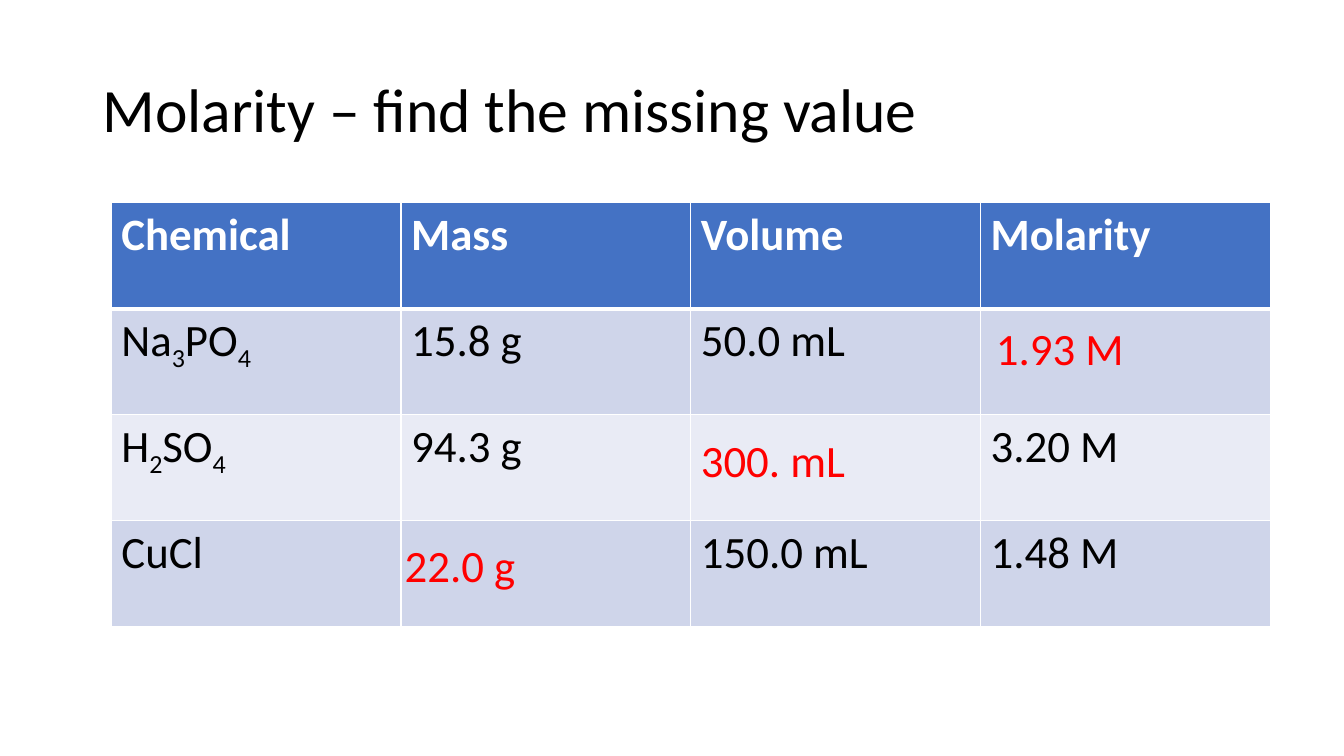
from itertools import groupby

from lxml.etree import SubElement
from pptx import Presentation
from pptx.dml.color import RGBColor
from pptx.enum.text import MSO_ANCHOR, PP_ALIGN
from pptx.oxml.ns import qn
from pptx.util import Pt

EMU_PER_PX = 9525
FONT = "Calibri"
COLORS = {
    "text": "000000",
    "white": "FFFFFF",
    "header": "4472C4",
    "odd_row": "CFD5EA",
    "even_row": "E9EBF5",
    "answer": "FF0000",
}
MOLARITY_ROWS = [
    ["Chemical", "Mass", "Volume", "Molarity"],
    ["Na3PO4", "15.8 g", "50.0 mL", ""],
    ["H2SO4", "94.3 g", "", "3.20 M"],
    ["CuCl", "", "150.0 mL", "1.48 M"],
]
ANSWERS = [
    ("1.93 M", 939, 301),
    ("300. mL", 658, 407),
    ("22.0 g", 376, 507),
]


def px(length):
    return length * EMU_PER_PX


def write(frame, text, size=32, color="text", bold=False, formula=False,
          spacing=None):
    """Fill the first paragraph; in a formula, digits become subscripts."""
    paragraph = frame.paragraphs[0]
    paragraph.alignment = PP_ALIGN.LEFT
    if spacing:
        paragraph.line_spacing = spacing
    if formula:
        parts = [(digit, "".join(chars)) for digit, chars in groupby(text, str.isdigit)]
    else:
        parts = [(False, text)]
    for subscript, part in parts:
        run = paragraph.add_run()
        run.text = part
        run.font.name = FONT
        run.font.size = Pt(size)
        run.font.bold = bold
        run.font.color.rgb = RGBColor.from_string(COLORS[color])
        if subscript:
            run.font._element.set("baseline", "-25000")


def set_borders(cell, **widths):
    """Draw white cell edges, given as L, R, T and B widths in points."""
    properties = cell._tc.get_or_add_tcPr()
    for position, (side, width) in enumerate(widths.items()):
        line = SubElement(properties, qn(f"a:ln{side}"), w=str(Pt(width)))
        fill = SubElement(line, qn("a:solidFill"))
        SubElement(fill, qn("a:srgbClr"), val=COLORS["white"])
        properties.insert(position, line)


def add_title(slide, text, left, top, width, height):
    title = slide.shapes.title
    title.left, title.top = px(left), px(top)
    title.width, title.height = px(width), px(height)
    title.text_frame.word_wrap = True
    title.text_frame.vertical_anchor = MSO_ANCHOR.MIDDLE
    write(title.text_frame, text, size=44, spacing=0.9)


def add_molarity_table(slide, rows, left, top, width, height):
    table = slide.shapes.add_table(len(rows), len(rows[0]), px(left), px(top),
                                   px(width), px(height)).table
    for r, values in enumerate(rows):
        header = r == 0
        row_color = "header" if header else "odd_row" if r % 2 else "even_row"
        for c, value in enumerate(values):
            cell = table.cell(r, c)
            cell.fill.solid()
            cell.fill.fore_color.rgb = RGBColor.from_string(COLORS[row_color])
            set_borders(cell, L=1, R=1, T=3 if r == 1 else 1, B=3 if header else 1)
            if value:
                write(cell.text_frame, value, color="white" if header else "text",
                      bold=header, formula=c == 0)


def add_answer(slide, text, left, top, width=195, height=61):
    answer = slide.shapes.add_textbox(px(left), px(top), px(width), px(height))
    answer.text_frame.word_wrap = True
    write(answer.text_frame, text, color="answer")


def main():
    deck = Presentation()
    deck.slide_width, deck.slide_height = px(1280), px(720)
    slide = deck.slides.add_slide(deck.slide_layouts.get_by_name("Title Only"))
    add_title(slide, "Molarity – find the missing value", 88, 38, 1104, 139)
    add_molarity_table(slide, MOLARITY_ROWS, 106, 193, 1104, 404)
    for text, left, top in ANSWERS:
        add_answer(slide, text, left, top)
    deck.save("out.pptx")


if __name__ == "__main__":
    main()
